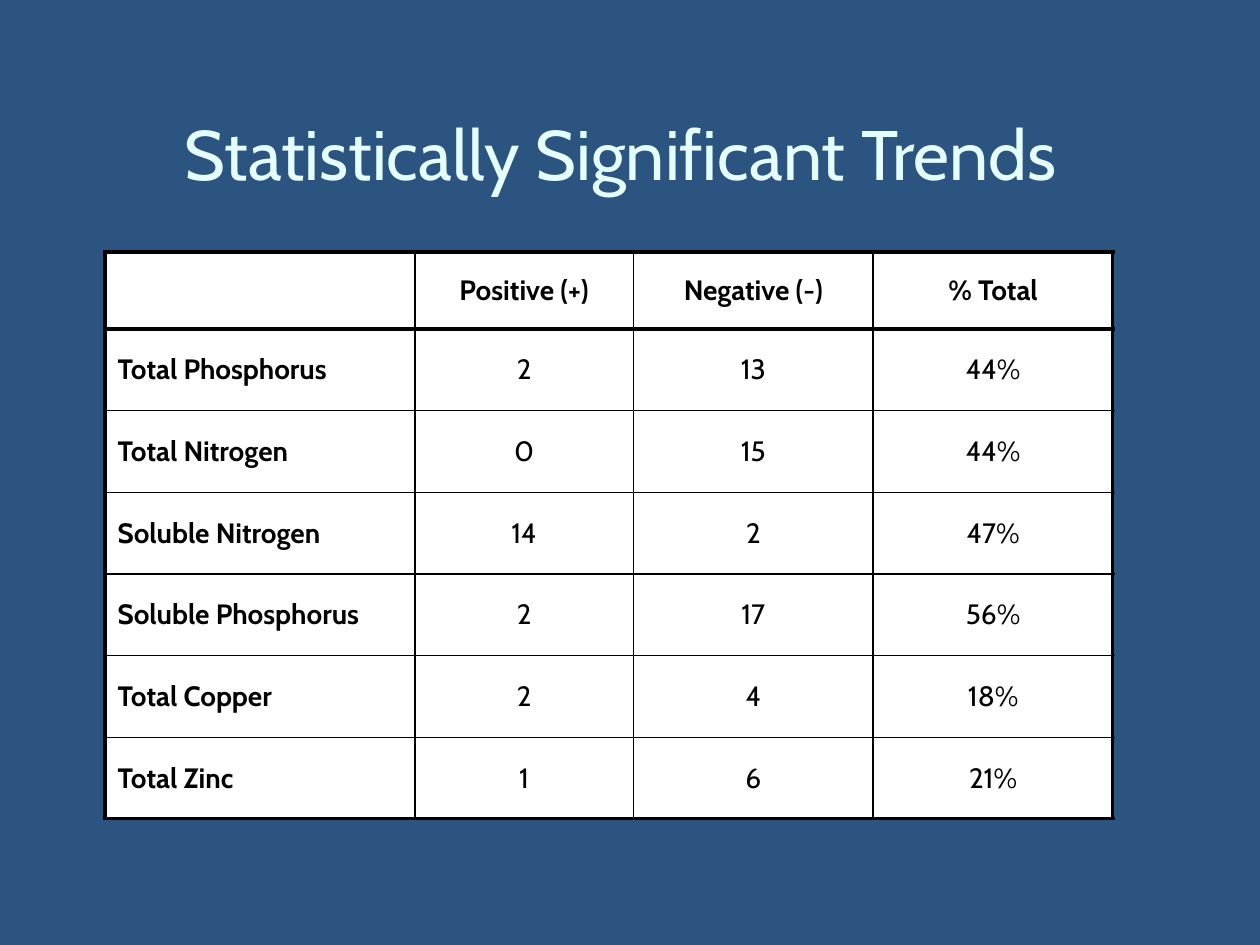
from dataclasses import dataclass

from lxml.etree import SubElement
from pptx import Presentation
from pptx.dml.color import RGBColor
from pptx.enum.text import MSO_ANCHOR as Anchor, PP_ALIGN as Align
from pptx.oxml.ns import qn
from pptx.util import Pt

COLORS = {"back": "2B5481", "title": "E5FFFF", "cell": "FFFFFF", "ink": "000000"}
FONT = "Cabin"
HEADERS = ("", "Positive (+)", "Negative (-)", "% Total")
COLUMN_WIDTHS = (177, 125, 137, 137)
HEADER_HEIGHT, ROW_HEIGHT = 44, 46.67
THICK, THIN = 2, 1
INDENT = 27


@dataclass
class Trend:
    name: str
    positive: int
    negative: int
    share: str

    def texts(self) -> tuple:
        return self.name, str(self.positive), str(self.negative), self.share


TRENDS = [
    Trend("Total Phosphorus", 2, 13, "44%"),
    Trend("Total Nitrogen", 0, 15, "44%"),
    Trend("Soluble Nitrogen", 14, 2, "47%"),
    Trend("Soluble Phosphorus", 2, 17, "56%"),
    Trend("Total Copper", 2, 4, "18%"),
    Trend("Total Zinc", 1, 6, "21%"),
]


def color(name: str) -> RGBColor:
    return RGBColor.from_string(COLORS[name])


def set_values(target, values: dict) -> None:
    for name, value in values.items():
        setattr(target, name, value)


def add_span(para, text: str, ink: str, size: float, bold: bool = False) -> None:
    span = para.add_run()
    span.text = text
    set_values(span.font, {"name": FONT, "size": Pt(size), "bold": bold})
    span.font.color.rgb = color(ink)


def draw_borders(cell, widths: dict) -> None:
    properties = cell._tc.get_or_add_tcPr()
    for side, width in widths.items():
        line = SubElement(properties, qn(f"a:ln{side}"), w=str(Pt(width)))
        fill = SubElement(line, qn("a:solidFill"))
        SubElement(fill, qn("a:srgbClr"), val=COLORS["ink"])


def draw_cell(cell, text: str, bold: bool, align, borders: dict) -> None:
    draw_borders(cell, borders)
    cell.fill.solid()
    cell.fill.fore_color.rgb = color("cell")
    cell.vertical_anchor = Anchor.MIDDLE
    if text:
        para = cell.text_frame.paragraphs[0]
        para.alignment = align
        set_values(para._p.get_or_add_pPr(), {"marL": Pt(INDENT), "indent": Pt(-INDENT)})
        add_span(para, text, "ink", 16, bold)


def draw_title(page) -> None:
    title = page.shapes.title
    set_values(title, {"left": Pt(36), "top": Pt(30), "width": Pt(648), "height": Pt(108)})
    set_values(title.text_frame, {"vertical_anchor": Anchor.MIDDLE, "word_wrap": True})
    para = title.text_frame.paragraphs[0]
    para.alignment = Align.CENTER
    add_span(para, "Statistically Significant Trends", "title", 40)
    add_span(para, " ", "title", 48)


def draw_table(page) -> None:
    rows = [HEADERS] + [trend.texts() for trend in TRENDS]
    last_row, last_column = len(rows) - 1, len(HEADERS) - 1
    height = HEADER_HEIGHT + ROW_HEIGHT * last_row
    table = page.shapes.add_table(len(rows), len(HEADERS), Pt(60), Pt(144),
                                  Pt(sum(COLUMN_WIDTHS)), Pt(height)).table
    set_values(table, {"first_row": False, "horz_banding": False})
    for column, width in zip(table.columns, COLUMN_WIDTHS):
        column.width = Pt(width)
    for r, texts in enumerate(rows):
        table.rows[r].height = Pt(ROW_HEIGHT if r else HEADER_HEIGHT)
        for c, text in enumerate(texts):
            # Thick lines frame the table and close the header row
            borders = {
                "L": THICK if c == 0 else THIN,
                "R": THICK if c == last_column else THIN,
                "T": THICK if r <= 1 else THIN,
                "B": THICK if r in (0, last_row) else THIN,
            }
            draw_cell(table.cell(r, c), text, r == 0 or c == 0,
                      Align.CENTER if c else Align.LEFT, borders)


def main() -> None:
    deck = Presentation()
    set_values(deck, {"slide_width": Pt(720), "slide_height": Pt(540)})
    page = deck.slides.add_slide(deck.slide_layouts[5])
    page.background.fill.solid()
    page.background.fill.fore_color.rgb = color("back")
    draw_title(page)
    draw_table(page)
    deck.save("out.pptx")


if __name__ == "__main__":
    main()
